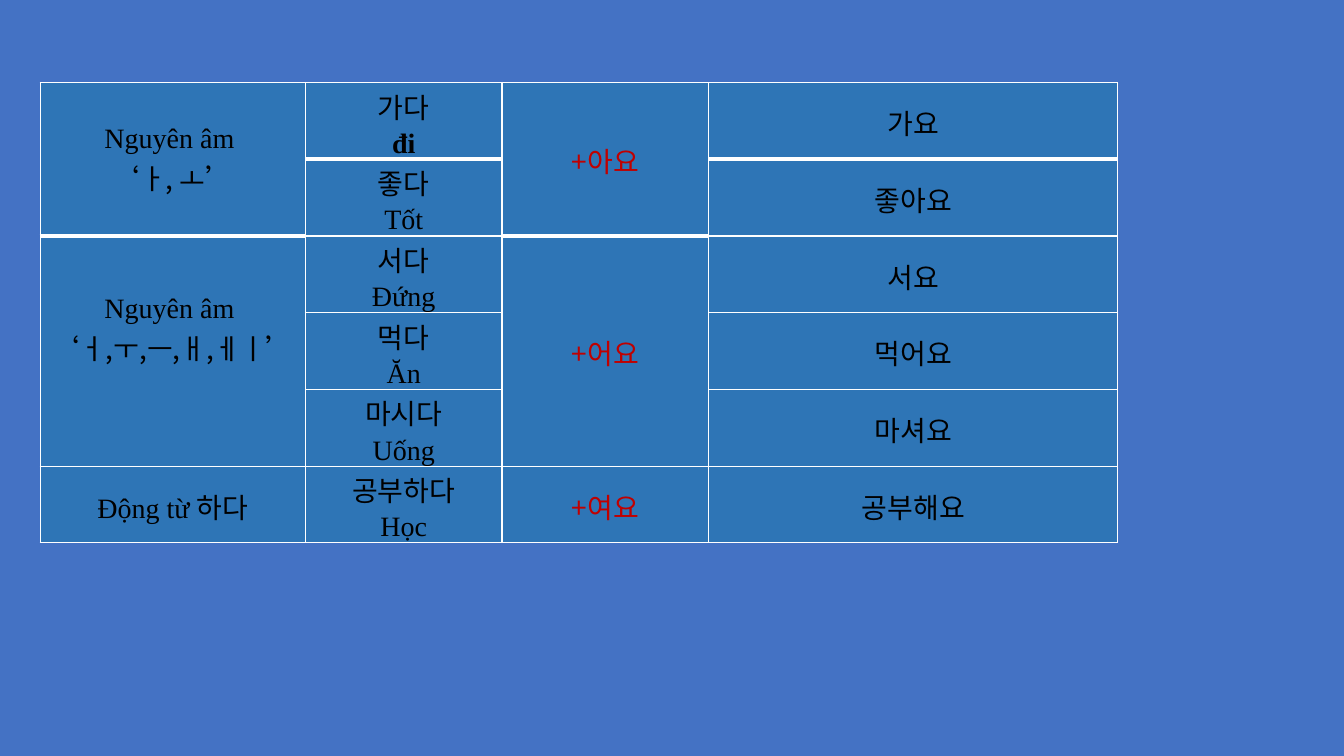
"""Build a slide with a table of Korean verb endings by stem vowel."""
from dataclasses import dataclass

from lxml.etree import SubElement
from pptx import Presentation
from pptx.dml.color import RGBColor
from pptx.enum.text import MSO_ANCHOR, PP_ALIGN
from pptx.oxml.ns import qn
from pptx.util import Pt


@dataclass(frozen=True)
class Theme:
    background: str = "4472C4"
    cell: str = "2E75B6"
    border: str = "FFFFFF"
    text: str = "000000"
    ending: str = "C00000"
    latin: str = "Times New Roman"
    korean: str = "Noto Sans CJK KR"
    size: float = 20
    line_spacing: float = 1.07
    thin: float = 1
    thick: float = 3


class SlideBuilder:
    def __init__(self, prs, theme):
        self.theme = theme
        self.s = prs.slides.add_slide(prs.slide_layouts[6])
        fill = self.s.background.fill
        fill.solid()
        fill.fore_color.rgb = RGBColor.from_string(theme.background)

    def table(self, left, top, widths, row_height, rows):
        sp = self.s.shapes.add_table(len(rows), len(widths), Pt(left), Pt(top),
                                     Pt(sum(widths)), Pt(row_height * len(rows)))
        tbl = sp.table
        tbl.first_row = tbl.horz_banding = False
        for col, width in zip(tbl.columns, widths):
            col.width = Pt(width)
        for row in tbl.rows:
            row.height = Pt(row_height)
        for i, row in enumerate(rows):
            for j, lines in enumerate(row):
                cell = tbl.cell(i, j)
                self.borders(cell, i, thick=i == 0 or (i == 1 and lines is None))
                cell.fill.solid()
                cell.fill.fore_color.rgb = RGBColor.from_string(self.theme.cell)
                if lines:
                    self.cell_text(cell, lines)
        return tbl

    def borders(self, cell, row, thick):
        tcPr = cell._tc.get_or_add_tcPr()
        widths = {"lnL": self.theme.thin, "lnR": self.theme.thin}
        if row == 0:
            widths["lnT"] = self.theme.thin
        widths["lnB"] = self.theme.thick if thick else self.theme.thin
        for side, width in widths.items():
            ln = SubElement(tcPr, qn(f"a:{side}"), w=str(Pt(width)))
            fill = SubElement(ln, qn("a:solidFill"))
            SubElement(fill, qn("a:srgbClr"), val=self.theme.border)

    def cell_text(self, cell, lines):
        cell.vertical_anchor = MSO_ANCHOR.MIDDLE
        cell.margin_left = cell.margin_right = Pt(5)
        cell.margin_top = cell.margin_bottom = 0
        tf = cell.text_frame
        tf.text = "\n".join(lines)
        for p in tf.paragraphs:
            p.alignment = PP_ALIGN.CENTER
            p.line_spacing = self.theme.line_spacing
            parts = p.text.split("|")
            p.text = parts[0]
            for part in parts[1:]:
                p.add_run().text = part
            for r in p.runs:
                self.format_run(r)

    def format_run(self, r):
        theme = self.theme
        is_korean = any(ch >= "ㄱ" for ch in r.text)
        name = theme.korean if is_korean else theme.latin
        color = theme.ending if r.text.startswith("+") else theme.text
        r.font.name = name
        r.font.size = Pt(theme.size)
        r.font.bold = r.text == "đi"
        r.font.color.rgb = RGBColor.from_string(color)
        SubElement(r.font._element, qn("a:ea"), typeface=name)


ROWS = [
    [("Nguyên âm ", "‘ㅏ, ㅗ’"), ("가다", "đi"), ("+아요",), ("가요",)],
    [None, ("좋다", "Tốt"), None, ("좋아요",)],
    [("Nguyên âm ", "‘ㅓ,ㅜ,ㅡ,ㅐ,ㅔㅣ’"), ("서다", "Đứng"), ("+어요",), ("서요",)],
    [None, ("먹다", "Ăn"), None, ("먹어요",)],
    [None, ("마시다", "Uống"), None, ("마셔요",)],
    [("Động từ |하다",), ("공부하다", "Học"), ("+여요",), ("공부해요",)],
]


def main():
    prs = Presentation()
    prs.slide_width, prs.slide_height = Pt(960), Pt(540)
    builder = SlideBuilder(prs, Theme())
    tbl = builder.table(28.8, 59, [189.4, 140.4, 147.6, 292.3], 54.75, ROWS)
    for first, last in ((0, 1), (2, 4)):
        for col in (0, 2):
            tbl.cell(first, col).merge(tbl.cell(last, col))
    tbl.cell(2, 0).margin_bottom = Pt(31)
    prs.save("out.pptx")


if __name__ == "__main__":
    main()
